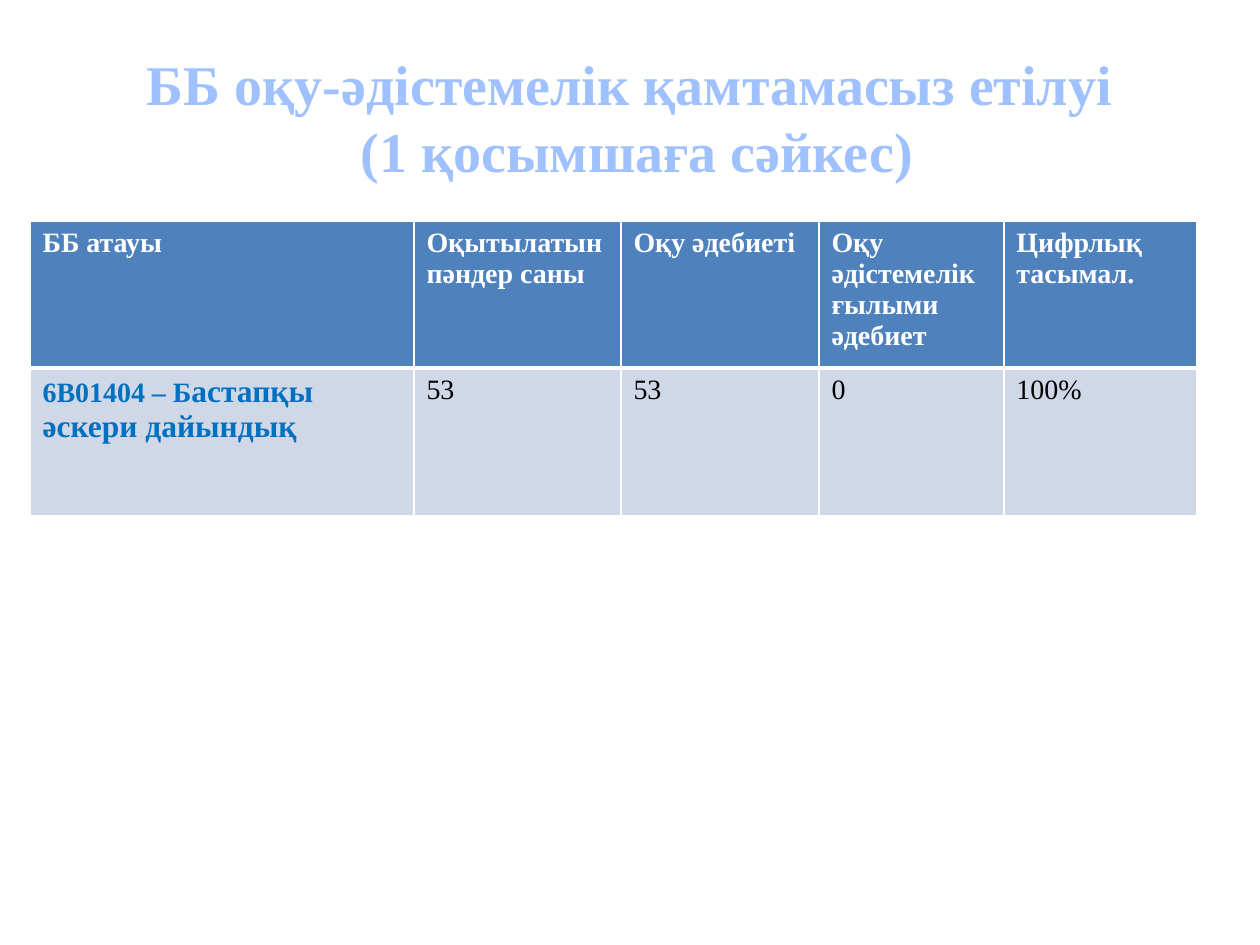
from dataclasses import dataclass

from lxml import etree
from pptx import Presentation
from pptx import util as u
from pptx.dml.color import RGBColor
from pptx.enum import text
from pptx.oxml import ns

PX = u.Inches(1) / 126
FONT = "Times New Roman"
COLORS = {
    "title": "A0C1FF",
    "header": "4F81BD",
    "body": "D0D8E8",
    "white": "FFFFFF",
    "programme": "0070C0",
    "value": "000000",
}


@dataclass(frozen=True)
class Span:
    words: str
    color: str
    size: int = 16
    bold: bool = True


@dataclass(frozen=True)
class Row:
    height: int
    fill: str
    top_line: int
    bottom_line: int
    cells: list[list[Span]]


COLUMN_WIDTHS = [384, 207, 198, 185, 193]
HEADINGS = [
    "ББ атауы",
    "Оқытылатын пәндер саны",
    "Оқу әдебиеті",
    "Оқу әдістемелік ғылыми әдебиет",
    "Цифрлық тасымал.",
]
PROGRAMME = [
    Span("6В01404 – Б", "programme"),
    Span("астапқы әскери дайындық", "programme", 18),
]
VALUES = ["53", "53", "0", "100%"]
ROWS = [
    Row(136, "header", 1, 3, [[Span(heading, "white")] for heading in HEADINGS]),
    Row(148, "body", 3, 1,
        [PROGRAMME] + [[Span(value, "value", bold=False)] for value in VALUES]),
]
TITLE_LINES = ["ББ оқу-әдістемелік қамтамасыз етілуі", " (1 қосымшаға сәйкес)"]


def px(length: int) -> u.Emu:
    return u.Emu(round(length * PX))


def rgb(name: str) -> RGBColor:
    return RGBColor.from_string(COLORS[name])


def add_span(paragraph, span: Span) -> None:
    run = paragraph.add_run()
    run.text = span.words
    run.font.name = FONT
    run.font.size = u.Pt(span.size)
    run.font.bold = span.bold
    run.font.color.rgb = rgb(span.color)


def add_title(slide) -> None:
    frame = slide.shapes.add_textbox(px(63), px(38), px(1134), px(157)).text_frame
    frame.word_wrap = True
    frame.vertical_anchor = text.MSO_ANCHOR.MIDDLE
    paragraph = frame.paragraphs[0]
    paragraph.alignment = text.PP_ALIGN.CENTER
    for index, line in enumerate(TITLE_LINES):
        if index:
            paragraph.add_line_break()
        add_span(paragraph, Span(line, "title", 32))


def add_borders(cell, row: Row) -> None:
    properties = cell._tc.get_or_add_tcPr()
    widths = {"lnL": 1, "lnR": 1, "lnT": row.top_line, "lnB": row.bottom_line}
    for side, points in widths.items():
        line = etree.SubElement(properties, ns.qn(f"a:{side}"), w=str(u.Pt(points)))
        fill = etree.SubElement(line, ns.qn("a:solidFill"))
        etree.SubElement(fill, ns.qn("a:srgbClr"), val=COLORS["white"])


def add_provision_table(slide) -> None:
    table = slide.shapes.add_table(
        len(ROWS), len(COLUMN_WIDTHS), px(30), px(221),
        px(sum(COLUMN_WIDTHS)), px(sum(row.height for row in ROWS)),
    ).table
    for column, width in zip(table.columns, COLUMN_WIDTHS):
        column.width = px(width)
    for table_row, row in zip(table.rows, ROWS):
        table_row.height = px(row.height)
        for cell, spans in zip(table_row.cells, row.cells):
            add_borders(cell, row)
            cell.fill.solid()
            cell.fill.fore_color.rgb = rgb(row.fill)
            for span in spans:
                add_span(cell.text_frame.paragraphs[0], span)


def main() -> None:
    deck = Presentation()
    deck.slide_width, deck.slide_height = px(1260), px(945)
    slide = deck.slides.add_slide(deck.slide_layouts[6])
    add_title(slide)
    add_provision_table(slide)
    deck.save("out.pptx")


if __name__ == "__main__":
    main()
